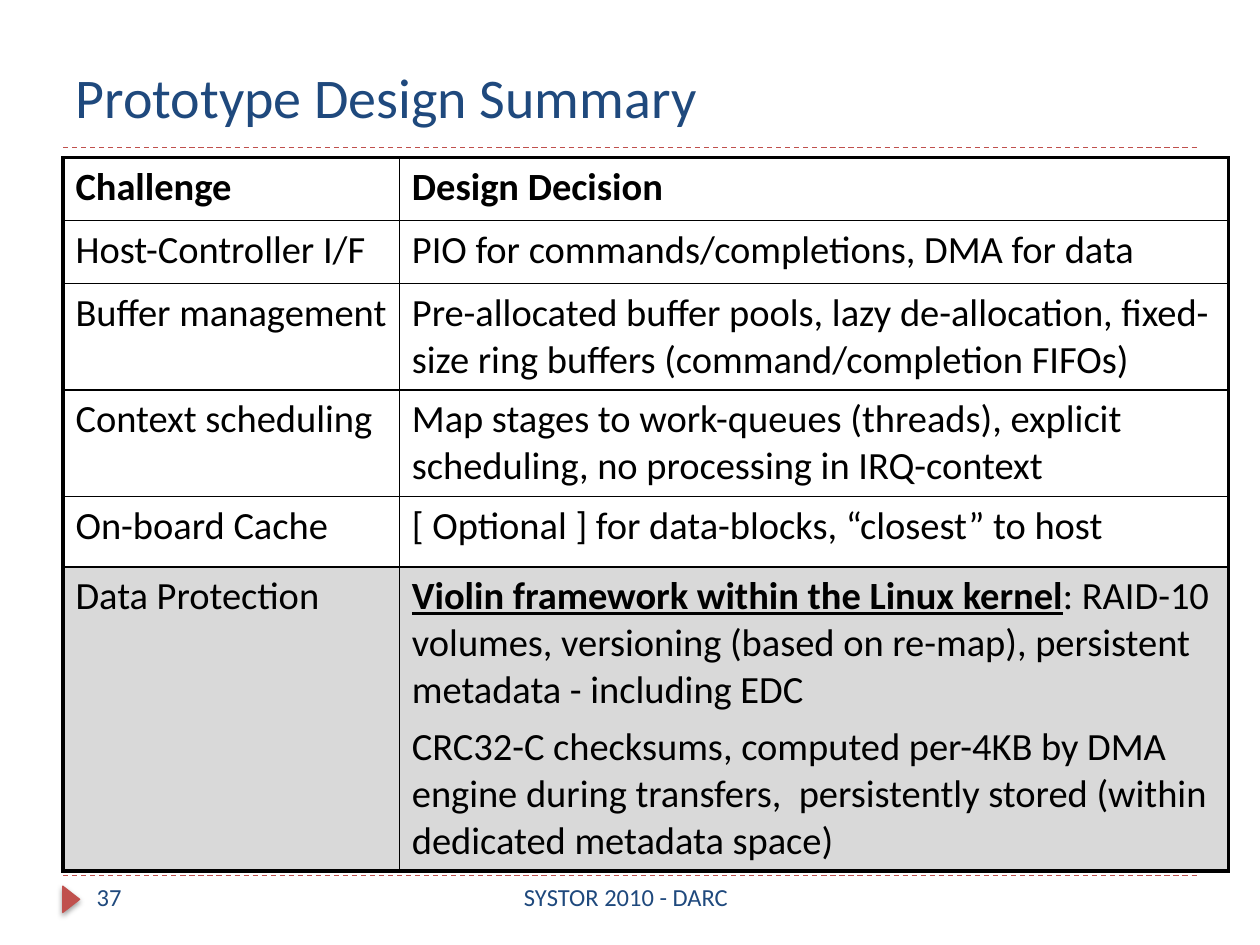
from dataclasses import dataclass

from lxml.etree import SubElement
from pptx import Presentation
from pptx.dml.color import RGBColor
from pptx.enum.dml import MSO_LINE
from pptx.enum.shapes import MSO_CONNECTOR, MSO_SHAPE
from pptx.enum.text import MSO_ANCHOR, PP_ALIGN
from pptx.oxml.ns import qn
from pptx.util import Cm, Pt


@dataclass(frozen=True)
class Theme:
    font: str = "Calibri"
    navy: str = "1F497D"
    red: str = "C0504D"
    ink: str = "000000"
    highlight: str = "D9D9D9"
    title_size: int = 32
    table_size: int = 22
    footer_size: int = 14
    outer_border: float = 2.25
    inner_border: float = 1


THEME = Theme()

COLUMN_WIDTHS = (6.78, 16.71)
ROW_HEIGHTS = (1.27, 1.27, 2.13, 2.13, 1.42, 6.12)

# Each decision is a list of paragraphs; each paragraph is (key phrase, plain text)
DECISIONS = [
    ("Challenge", [("", "Design Decision")]),
    ("Host-Controller I/F", [("", "PIO for commands/completions, DMA for data")]),
    ("Buffer management", [("", "Pre-allocated buffer pools, lazy de-allocation, fixed-size "
                                "ring buffers (command/completion FIFOs)")]),
    ("Context scheduling", [("", "Map stages to work-queues (threads), explicit scheduling, "
                                 "no processing in IRQ-context")]),
    ("On-board Cache", [("", "[ Optional ] for data-blocks, “closest” to host")]),
    ("Data Protection", [
        ("Violin framework within the Linux kernel",
         ": RAID-10 volumes, versioning (based on re-map), persistent metadata - including EDC"),
        ("", "CRC32-C checksums, computed per-4KB by DMA engine during transfers,  "
             "persistently stored (within dedicated metadata space)"),
    ]),
]


def rgb(value):
    return RGBColor.from_string(value)


def style_font(font, size, color, bold=None):
    font.name = THEME.font
    font.size = Pt(size)
    font.color.rgb = rgb(color)
    font.bold = bold


def add_title(slide, text):
    title = slide.shapes.title
    title.left, title.top, title.width, title.height = Cm(1.27), Cm(0.64), Cm(22.86), Cm(2.1)
    title.text_frame.text = text
    title.text_frame.vertical_anchor = MSO_ANCHOR.BOTTOM
    heading = title.text_frame.paragraphs[0]
    heading.alignment = PP_ALIGN.LEFT
    style_font(heading.font, THEME.title_size, THEME.navy)


def add_rule(slide, y):
    rule = slide.shapes.add_connector(MSO_CONNECTOR.STRAIGHT, Cm(1.27), Cm(y), Cm(24.13), Cm(y))
    rule.line.color.rgb = rgb(THEME.red)
    rule.line.width = Pt(0.75)
    rule.line.dash_style = MSO_LINE.DASH
    SubElement(rule._element.spPr, qn("a:effectLst"))


def add_page_marker(slide):
    marker = slide.shapes.add_shape(MSO_SHAPE.ISOSCELES_TRIANGLE,
                                    Cm(1.17), Cm(17.96), Cm(0.53), Cm(0.34))
    marker.rotation = 90
    marker.fill.solid()
    marker.fill.fore_color.rgb = rgb(THEME.red)
    marker.line.color.rgb = rgb(THEME.red)
    marker.line.width = Pt(0.75)
    # Soft shadow below the marker
    marker.shadow.inherit = False
    effects = marker._element.spPr.find(qn("a:effectLst"))
    shadow = SubElement(effects, qn("a:outerShdw"), blurRad=str(Pt(3.1)), dist=str(Pt(1.6)),
                        dir="5400000", rotWithShape="0")
    shade = SubElement(shadow, qn("a:srgbClr"), val=THEME.ink)
    SubElement(shade, qn("a:alpha"), val="38000")


def add_footer_text(slide, text, left, width, alignment):
    frame = slide.shapes.add_textbox(Cm(left), Cm(17.65), Cm(width), Cm(1.02)).text_frame
    frame.word_wrap = True
    frame.text = text
    footer = frame.paragraphs[0]
    footer.alignment = alignment
    style_font(footer.font, THEME.footer_size, THEME.navy)


def set_borders(cell, outer_sides):
    properties = cell._tc.get_or_add_tcPr()
    for side in "LRTB":
        width = THEME.outer_border if side in outer_sides else THEME.inner_border
        border = SubElement(properties, qn(f"a:ln{side}"), w=str(Pt(width)))
        SubElement(SubElement(border, qn("a:solidFill")), qn("a:srgbClr"), val=THEME.ink)


def write_cell(cell, paragraphs, bold):
    frame = cell.text_frame
    for index, (key_phrase, plain_text) in enumerate(paragraphs):
        paragraph = frame.add_paragraph() if index else frame.paragraphs[0]
        if index:
            paragraph.space_before = Pt(6)
        style_font(paragraph.font, THEME.table_size, THEME.ink, bold)
        if key_phrase:
            phrase = paragraph.add_run()
            phrase.text = key_phrase
            phrase.font.bold = phrase.font.underline = True
        paragraph.add_run().text = plain_text


def add_decision_table(slide):
    table = slide.shapes.add_table(len(DECISIONS), len(COLUMN_WIDTHS), Cm(1.27), Cm(3.18),
                                   Cm(sum(COLUMN_WIDTHS)), Cm(sum(ROW_HEIGHTS))).table
    table.first_row = table.horz_banding = False
    for column, width in zip(table.columns, COLUMN_WIDTHS):
        column.width = Cm(width)
    last_row = len(DECISIONS) - 1
    for r, (challenge, decision) in enumerate(DECISIONS):
        table.rows[r].height = Cm(ROW_HEIGHTS[r])
        row_edge = {0: "T", last_row: "B"}.get(r, "")
        for c, paragraphs in enumerate(([("", challenge)], decision)):
            cell = table.cell(r, c)
            set_borders(cell, row_edge + "LR"[c])
            if r == last_row:
                cell.fill.solid()
                cell.fill.fore_color.rgb = rgb(THEME.highlight)
            else:
                cell.fill.background()
            write_cell(cell, paragraphs, bold=r == 0)


def main():
    deck = Presentation()
    deck.slide_width, deck.slide_height = Cm(25.4), Cm(19.05)
    slide = deck.slides.add_slide(deck.slide_layouts[5])

    # Frame of the page
    for y in (2.97, 17.65):
        add_rule(slide, y)
    add_page_marker(slide)

    # Content
    add_title(slide, "Prototype Design Summary")
    add_decision_table(slide)

    # Footer
    add_footer_text(slide, "37", 1.7, 5.5, PP_ALIGN.LEFT)
    add_footer_text(slide, "SYSTOR 2010 - DARC", 7.42, 10.4, PP_ALIGN.CENTER)

    deck.save("out.pptx")


if __name__ == "__main__":
    main()
